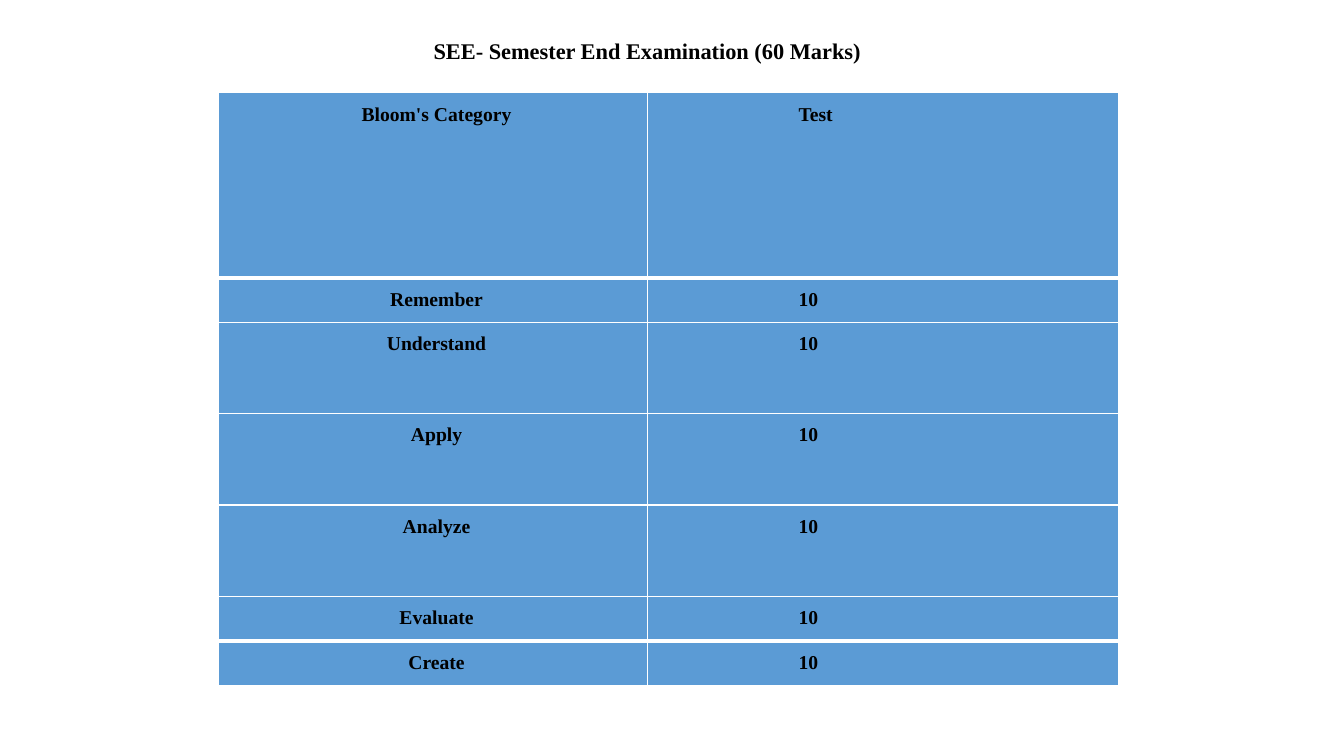
"""Build the slide of semester end examination marks by Bloom's category."""
from dataclasses import dataclass

from lxml.etree import SubElement as Sub
from pptx import Presentation
from pptx.dml.color import RGBColor
from pptx.enum.text import MSO_ANCHOR as Anchor, PP_ALIGN as Align
from pptx.oxml.ns import qn
from pptx.util import Inches, Pt

BLUE, WHITE, BLACK = "5B9BD5", "FFFFFF", "000000"
THIN, THICK = 1, 3


@dataclass
class Row:
    label: str
    mark: str
    height: float
    top: int = THIN
    base: int = THIN


ROWS = [
    Row("Bloom's Category", "Test", 1.84, base=THICK),
    Row("Remember", "10", 0.44, top=THICK),
    Row("Understand", "10", 0.9),
    Row("Apply", "10", 0.91),
    Row("Analyze", "10", 0.91),
    Row("Evaluate", "10", 0.44, base=THICK),
    Row("Create", "10", 0.44, top=THICK),
]
WIDTHS = [4.25, 4.67]


def color(code: str) -> RGBColor:
    return RGBColor.from_string(code)


def style(par, size: int, space: float, indent: float) -> None:
    par.line_spacing = space
    font = par.font
    font.name, font.size, font.bold = "Times New Roman", Pt(size), True
    font.color.rgb = color(BLACK)
    props = par._p.get_or_add_pPr()
    props.set("marL", str(Inches(indent)))
    props.set("indent", "0")


def border(cell, row: Row) -> None:
    props = cell._tc.get_or_add_tcPr()
    for side, width in zip("LRTB", (THIN, THIN, row.top, row.base)):
        line = Sub(props, qn(f"a:ln{side}"), w=str(Pt(width)))
        Sub(Sub(line, qn("a:solidFill")), qn("a:srgbClr"), val=WHITE)


def fill(cell, text: str, row: Row, align: Align, indent: float) -> None:
    cell.margin_left = cell.margin_right = 0
    cell.margin_top = cell.margin_bottom = 0
    cell.text = text
    par = cell.text_frame.paragraphs[0]
    par.alignment = align
    style(par, 14, 1.5, indent)
    border(cell, row)
    cell.fill.solid()
    cell.fill.fore_color.rgb = color(BLUE)


def title(slide) -> None:
    box = slide.shapes.add_textbox(Inches(3.5), Inches(0.31), Inches(5.08), Inches(0.35))
    frame = box.text_frame
    frame.word_wrap = True
    frame.vertical_anchor = Anchor.MIDDLE
    frame.margin_left, frame.margin_right = Inches(0.24), 0
    frame.margin_top, frame.margin_bottom = Inches(0.09), Inches(0.02)
    frame.text = "SEE- Semester End Examination (60 Marks)"
    style(frame.paragraphs[0], 16, 0.9, 0.56)


def grid(slide) -> None:
    high = sum(row.height for row in ROWS)
    table = slide.shapes.add_table(
        len(ROWS), len(WIDTHS), Inches(2.17), Inches(0.92),
        Inches(sum(WIDTHS)), Inches(high)).table
    for col, width in zip(table.columns, WIDTHS):
        col.width = Inches(width)
    for line, row in zip(table.rows, ROWS):
        line.height = Inches(row.height)
        label, mark = line.cells
        fill(label, row.label, row, Align.CENTER, 0.07)
        fill(mark, row.mark, row, Align.LEFT, 1.5)


def main() -> None:
    deck = Presentation()
    deck.slide_width, deck.slide_height = Inches(13.33), Inches(7.5)
    slide = deck.slides.add_slide(deck.slide_layouts[6])
    grid(slide)
    title(slide)
    deck.save("out.pptx")


if __name__ == "__main__":
    main()
